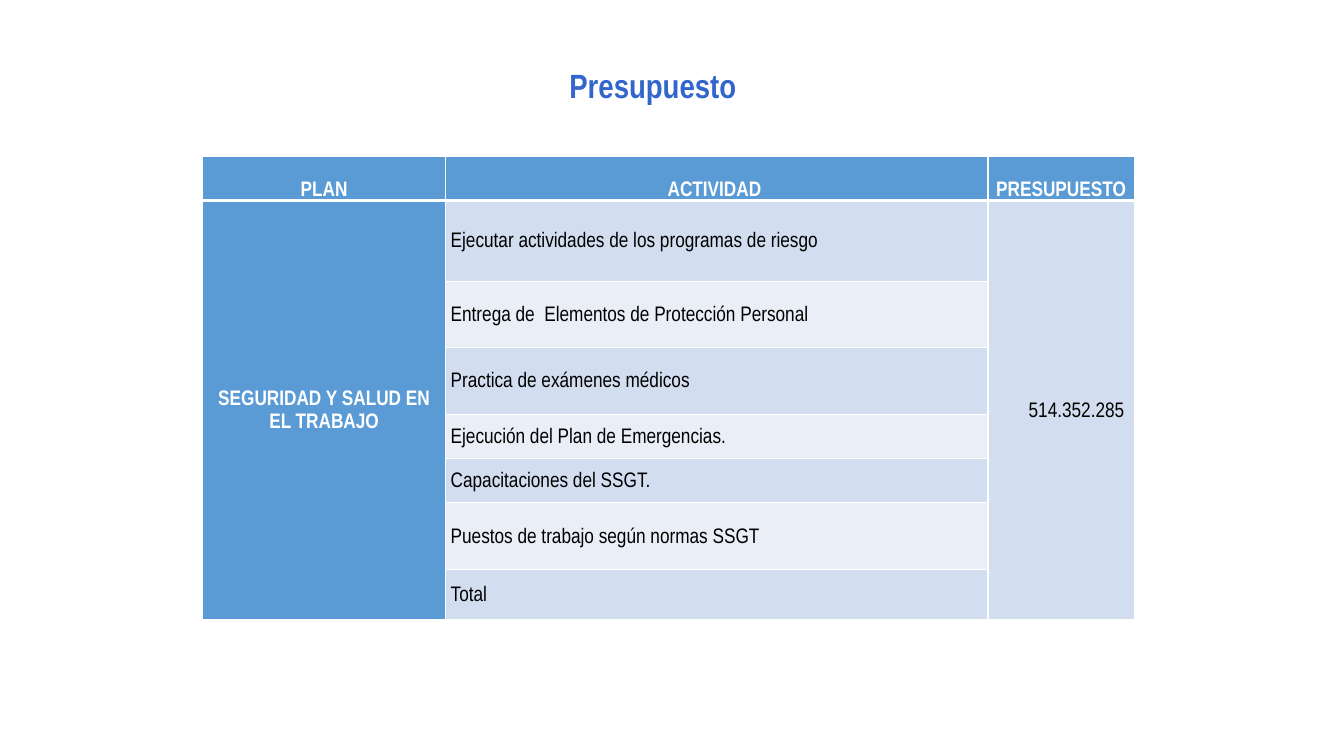
from lxml.etree import SubElement
from pptx import Presentation
from pptx.dml.color import RGBColor
from pptx.enum.text import MSO_ANCHOR as Anchor, MSO_AUTO_SIZE as AutoSize, PP_ALIGN as Align
from pptx.oxml.ns import qn
from pptx.util import Inches, Pt

WHITE, BLACK = "FFFFFF", "000000"
HEADING_BLUE, HEADER_BLUE = "3266CC", "5B9BD5"
BANDS = ("D2DEEF", "EAEFF7")

HEADERS = ("PLAN", "ACTIVIDAD ", "PRESUPUESTO")
PLAN = "SEGURIDAD Y SALUD EN EL TRABAJO"
AMOUNT = "514.352.285 "
ACTIVITIES = (
    ("Ejecutar actividades de los programas de riesgo", 0.8),
    ("Entrega de  Elementos de Protección Personal ", 0.66),
    ("Practica de exámenes médicos", 0.66),
    ("Ejecución del Plan de Emergencias.", 0.44),
    ("Capacitaciones del SSGT. ", 0.44),
    ("Puestos de trabajo según normas SSGT", 0.66),
    ("Total", 0.5),
)
COLUMN_WIDTHS = (2.41, 5.38, 1.45)
HEADER_HEIGHT = 0.44


def color(hex_code):
    return RGBColor.from_string(hex_code)


class BudgetSlide:
    font_name = "Arial Narrow"

    def __init__(self, deck):
        self.slide = deck.slides.add_slide(deck.slide_layouts[5])

    def fill_text(self, frame, text, size, ink, bold, align):
        frame.text = text
        frame.word_wrap = True
        paragraph = frame.paragraphs[0]
        paragraph.alignment = align
        for run in paragraph.runs:
            run.font.name = self.font_name
            run.font.size = Pt(size)
            run.font.bold = bold
            run.font.color.rgb = color(ink)
        return paragraph

    def title(self, text, left, top, width, height):
        heading = self.slide.shapes.title
        heading.left, heading.top = Inches(left), Inches(top)
        heading.width, heading.height = Inches(width), Inches(height)
        frame = heading.text_frame
        self.fill_text(frame, text, 24, HEADING_BLUE, True, Align.CENTER)
        frame.vertical_anchor = Anchor.TOP
        frame.auto_size = AutoSize.SHAPE_TO_FIT_TEXT

    def table(self, left, top, widths, heights):
        grid = self.slide.shapes.add_table(
            len(heights), len(widths), Inches(left), Inches(top),
            Inches(sum(widths)), Inches(sum(heights))).table
        for column, width in zip(grid.columns, widths):
            column.width = Inches(width)
        for row, height in zip(grid.rows, heights):
            row.height = Inches(height)
        return grid

    def borders(self, cell, bottom):
        properties = cell._tc.get_or_add_tcPr()
        for side, points in (("L", 1), ("R", 1), ("T", 1), ("B", bottom)):
            line = SubElement(properties, qn(f"a:ln{side}"), w=str(Pt(points)))
            SubElement(SubElement(line, qn("a:solidFill")), qn("a:srgbClr"), val=WHITE)

    def cell(self, cell, text, fill, ink=BLACK, bold=False, align=Align.JUSTIFY,
             anchor=Anchor.MIDDLE):
        cell.fill.solid()
        cell.fill.fore_color.rgb = color(fill)
        cell.margin_left = cell.margin_right = Inches(0.05)
        cell.margin_top = cell.margin_bottom = 0
        cell.vertical_anchor = anchor
        paragraph = self.fill_text(cell.text_frame, text, 15, ink, bold, align)
        paragraph.line_spacing = 1.15


def main():
    deck = Presentation()
    deck.slide_width, deck.slide_height = Inches(13.33), Inches(7.5)
    page = BudgetSlide(deck)

    # Heading
    page.title("Presupuesto", 3.92, 0.59, 5.11, 0.5)

    # Table grid and borders
    heights = [HEADER_HEIGHT] + [height for _, height in ACTIVITIES]
    budget = page.table(2.01, 1.55, COLUMN_WIDTHS, heights)
    for row_index, row in enumerate(budget.rows):
        for cell in row.cells:
            page.borders(cell, bottom=1 if row_index else 3)

    # Header row
    for column, label in enumerate(HEADERS):
        page.cell(budget.cell(0, column), label, HEADER_BLUE, WHITE, True,
                  Align.CENTER, Anchor.BOTTOM)

    # Plan and amount span all the activities
    for column in (0, 2):
        budget.cell(1, column).merge(budget.cell(len(ACTIVITIES), column))
    page.cell(budget.cell(1, 0), PLAN, HEADER_BLUE, WHITE, True, Align.CENTER)
    page.cell(budget.cell(1, 2), AMOUNT, BANDS[0], align=Align.RIGHT)

    # Activities in alternating bands
    for index, (activity, _) in enumerate(ACTIVITIES):
        page.cell(budget.cell(index + 1, 1), activity, BANDS[index % 2])

    deck.save("out.pptx")


if __name__ == "__main__":
    main()
